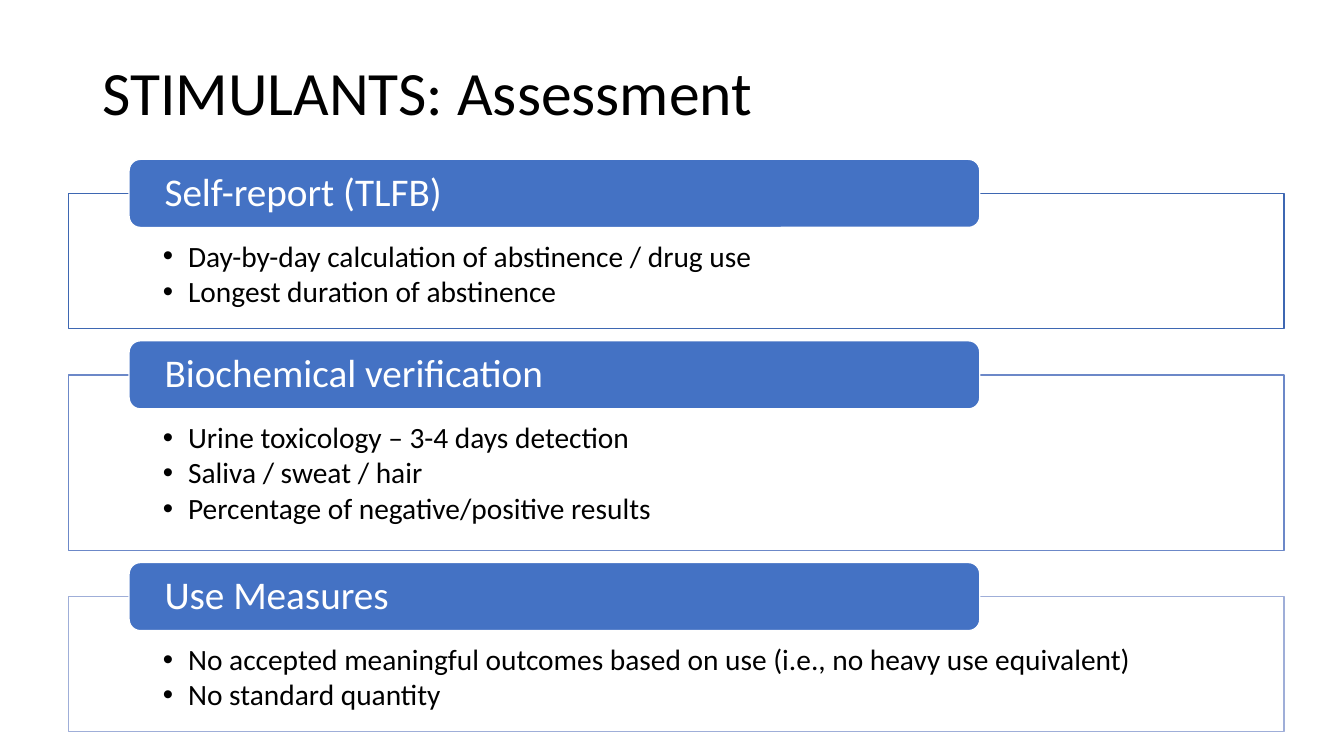
from lxml.etree import SubElement
from pptx import Presentation
from pptx.dml.color import RGBColor
from pptx.enum.shapes import MSO_SHAPE
from pptx.enum.text import MSO_ANCHOR, PP_ALIGN
from pptx.oxml.ns import qn
from pptx.util import Pt

# Content
TITLE = "STIMULANTS: Assessment"
SECTIONS = [
    ("Self-report (TLFB)", "outline1", [
        "Day-by-day calculation of abstinence / drug use",
        "Longest duration of abstinence",
    ]),
    ("Biochemical verification", "outline2", [
        "Urine toxicology – 3-4 days detection",
        "Saliva / sweat / hair",
        "Percentage of negative/positive results",
    ]),
    ("Use Measures", "outline3", [
        "No accepted meaningful outcomes based on use (i.e., no heavy use equivalent)",
        "No standard quantity",
    ]),
]
COLORS = {
    "black": "000000", "white": "FFFFFF", "blue": "4472C4",
    "outline1": "3E67B2", "outline2": "6C88C8", "outline3": "9FAED8",
}
FONT = "Calibri"

# Layout in points
BOX_LEFT, BOX_WIDTH, FIRST_TOP, BOX_GAP = 49, 868.3, 138.2, 33.1
BOX_BASE, BULLET_HEIGHT = 38.9, 28.8
TAB_LEFT, TAB_WIDTH, TAB_HEIGHT, TAB_RISE = 92.2, 607.7, 48.7, 24.4
BULLET_INDENT = 18


def color(name):
    return RGBColor.from_string(COLORS[name])


def write(sp, lines, size, ink="black", margins=(7.2, 3.6, 7.2, 3.6),
          anchor=MSO_ANCHOR.MIDDLE, after=0, bullet=False):
    tf = sp.text_frame
    tf.word_wrap = True
    tf.vertical_anchor = anchor
    (tf.margin_left, tf.margin_top,
     tf.margin_right, tf.margin_bottom) = map(Pt, margins)
    for i, line in enumerate(lines):
        p = tf.add_paragraph() if i else tf.paragraphs[0]
        p.alignment = PP_ALIGN.LEFT
        p.line_spacing = 0.9
        p.space_after = Pt(after)
        if bullet:
            p.level = 1
            pPr = p._p.get_or_add_pPr()
            pPr.set("marL", str(Pt(BULLET_INDENT)))
            pPr.set("indent", str(-Pt(BULLET_INDENT)))
            SubElement(pPr, qn("a:buFont"), typeface="Arial")
            SubElement(pPr, qn("a:buChar"), char="•")
        r = p.add_run()
        r.text = line
        r.font.name = FONT
        r.font.size = Pt(size)
        r.font.color.rgb = color(ink)


def add_panel(s, kind, left, top, width, height, fill, line):
    sp = s.shapes.add_shape(kind, Pt(left), Pt(top), Pt(width), Pt(height))
    sp.shadow.inherit = False
    sp.fill.solid()
    sp.fill.fore_color.rgb = color(fill)
    sp.line.color.rgb = color(line)
    sp.line.width = Pt(1)
    return sp


prs = Presentation()
prs.slide_width, prs.slide_height = Pt(960), Pt(540)
s = prs.slides.add_slide(prs.slide_layouts[6])

# Title
title = s.shapes.add_textbox(Pt(66), Pt(15.8), Pt(828), Pt(104.4))
write(title, [TITLE], 44)

# Sections: outlined box with bullets, heading tab over its top edge
top = FIRST_TOP
for heading, outline, bullets in SECTIONS:
    height = BOX_BASE + BULLET_HEIGHT * len(bullets)
    box = add_panel(s, MSO_SHAPE.RECTANGLE, BOX_LEFT, top, BOX_WIDTH, height,
                    "white", outline)
    write(box, bullets, 21, margins=(67.4, 34.4, 67.4, 11.5),
          anchor=MSO_ANCHOR.TOP, after=2.65, bullet=True)
    tab = add_panel(s, MSO_SHAPE.ROUNDED_RECTANGLE, TAB_LEFT, top - TAB_RISE,
                    TAB_WIDTH, TAB_HEIGHT, "blue", "white")
    write(tab, [heading], 28, ink="white", margins=(23, 0, 23, 0))
    top += height + BOX_GAP

prs.save("out.pptx")
